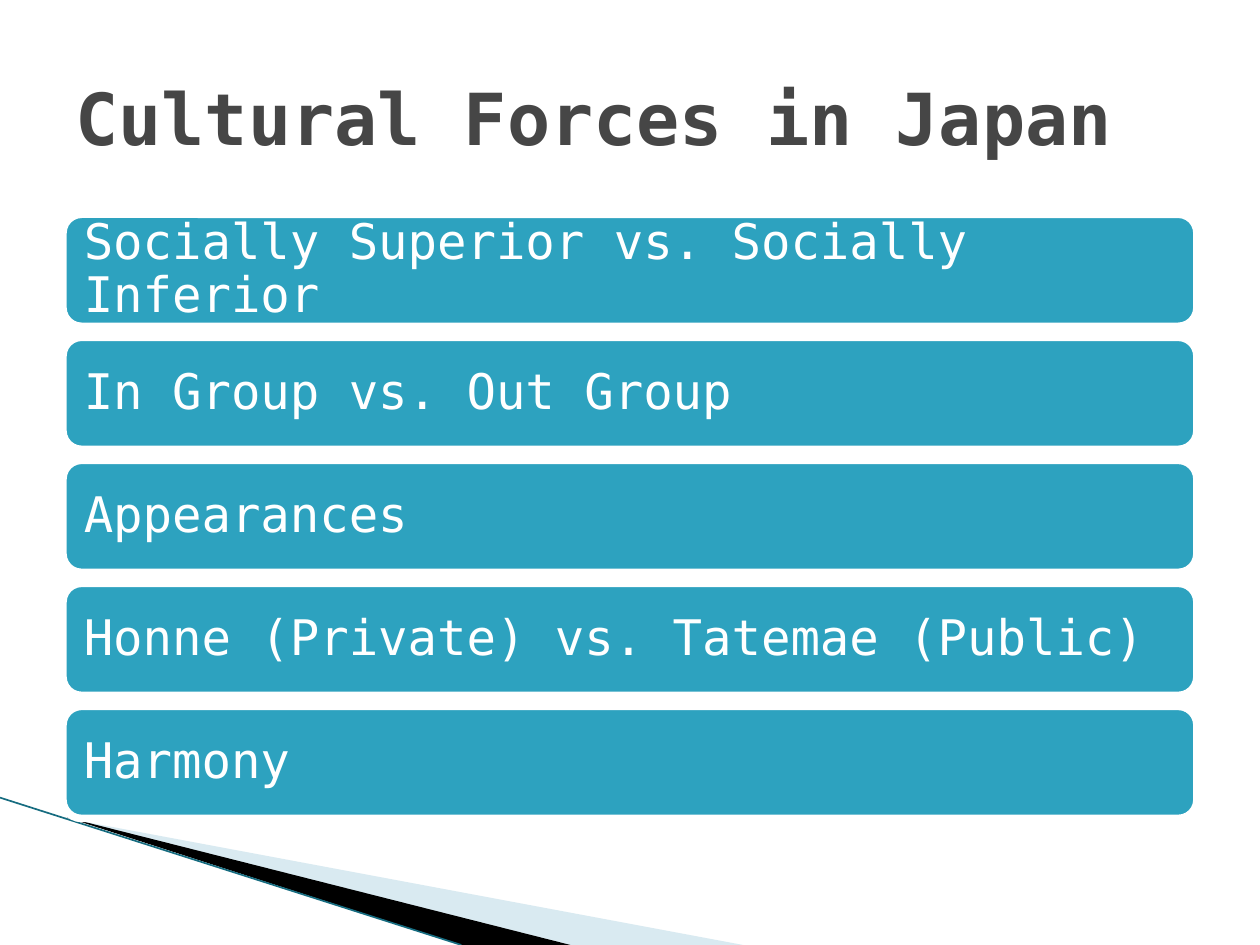
from lxml import etree
from pptx import Presentation
from pptx.dml.color import RGBColor
from pptx.enum.shapes import MSO_CONNECTOR, MSO_SHAPE
from pptx.enum.text import MSO_ANCHOR, PP_ALIGN
from pptx.oxml.ns import qn
from pptx.util import Cm, Pt

TITLE = "Cultural Forces in Japan"
FORCES = [
    "Socially Superior vs. Socially Inferior",
    "In Group vs. Out Group",
    "Appearances",
    "Honne (Private) vs. Tatemae (Public)",
    "Harmony",
]

WHITE = RGBColor(0xFF, 0xFF, 0xFF)
BLACK = RGBColor(0x00, 0x00, 0x00)
TEAL = RGBColor(0x2D, 0xA2, 0xBF)
DARK_TEAL = RGBColor(0x16, 0x6C, 0x80)
PALE_BLUE = RGBColor(0xA0, 0xCB, 0xDC)
GREY = RGBColor(0x46, 0x46, 0x46)
FONT = "DejaVu Sans Mono"
MIDDLE = MSO_ANCHOR.MIDDLE
LEFT = PP_ALIGN.LEFT

# Corner wedges: points in cm, colour, opacity in percent
WEDGES = [
    ([(1.4, 16.51), (14.98, 19.05), (11.5, 19.05)], PALE_BLUE, 40),
    ([(1.35, 16.48), (11.5, 19.05), (9.3, 19.05)], BLACK, 100),
]
EDGE_LINE = (0, 16.08, 9.3, 19.05)

MARGIN, CONTENT_WIDTH = 1.27, 22.86
BAR_TOP, BAR_HEIGHT, BAR_PITCH = 4.32, 2.26, 2.48
BAR_INSET = 0.31


def add_wedge(slide, points, color, opacity):
    corners = [(Cm(x), Cm(y)) for x, y in points]
    builder = slide.shapes.build_freeform(*corners[0])
    builder.add_line_segments(corners[1:], close=True)
    wedge = builder.convert_to_shape()
    wedge.shadow.inherit = False
    wedge.line.fill.background()
    wedge.fill.solid()
    wedge.fill.fore_color.rgb = color
    if opacity < 100:
        color_element = wedge.fill._xPr.find(qn("a:solidFill"))[0]
        alpha = etree.SubElement(color_element, qn("a:alpha"))
        alpha.set("val", str(opacity * 1000))


def add_edge_line(slide):
    line = slide.shapes.add_connector(
        MSO_CONNECTOR.STRAIGHT, *(Cm(value) for value in EDGE_LINE))
    line.line.color.rgb = DARK_TEAL
    line.line.width = Pt(0.95)
    etree.SubElement(line._element.spPr, qn("a:effectLst"))


def set_text(shape, text, size, color, bold=False):
    frame = shape.text_frame
    frame.text = text
    frame.word_wrap = True
    frame.vertical_anchor = MIDDLE
    para = frame.paragraphs[0]
    para.alignment = LEFT
    font = para.runs[0].font
    font.name = FONT
    font.size = Pt(size)
    font.bold = bold
    font.color.rgb = color


def add_bar(slide, index, text):
    bar = slide.shapes.add_shape(
        MSO_SHAPE.ROUNDED_RECTANGLE, Cm(MARGIN), Cm(BAR_TOP + index * BAR_PITCH),
        Cm(CONTENT_WIDTH), Cm(BAR_HEIGHT))
    bar.shadow.inherit = False
    bar.fill.solid()
    bar.fill.fore_color.rgb = TEAL
    bar.line.color.rgb = WHITE
    bar.line.width = Pt(4.33)
    set_text(bar, text, 28, WHITE)
    frame = bar.text_frame
    frame.margin_left = frame.margin_right = Cm(BAR_INSET)
    frame.margin_top = frame.margin_bottom = Cm(BAR_INSET)
    frame.paragraphs[0].line_spacing = 0.9


def main():
    deck = Presentation()
    deck.slide_width, deck.slide_height = Cm(25.4), Cm(19.05)
    slide = deck.slides.add_slide(deck.slide_layouts[6])
    for points, color, opacity in WEDGES:
        add_wedge(slide, points, color, opacity)
    add_edge_line(slide)
    for index, text in enumerate(FORCES):
        add_bar(slide, index, text)
    title = slide.shapes.add_textbox(
        Cm(MARGIN), Cm(0.76), Cm(CONTENT_WIDTH), Cm(3.18))
    set_text(title, TITLE, 41, GREY, bold=True)
    deck.save("out.pptx")


if __name__ == "__main__":
    main()
